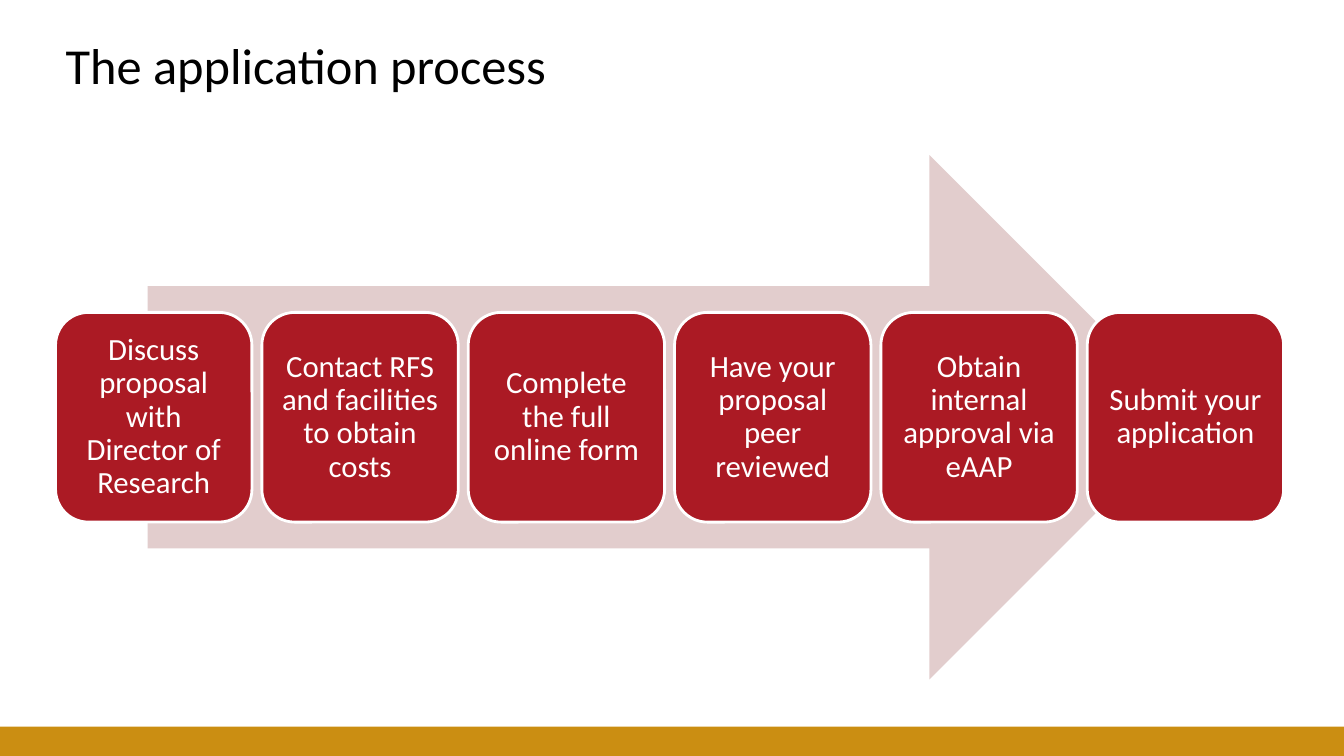
from pptx import Presentation
from pptx.dml.color import RGBColor
from pptx.enum.shapes import MSO_SHAPE as Shape
from pptx.enum.text import MSO_ANCHOR as Anchor, MSO_AUTO_SIZE as AutoSize, PP_ALIGN as Align
from pptx.util import Cm, Pt

WHITE = RGBColor(0xFF, 0xFF, 0xFF)
BLACK = RGBColor(0x00, 0x00, 0x00)
RED = RGBColor(0xAB, 0x1A, 0x24)
PINK = RGBColor(0xE2, 0xCD, 0xCD)
GOLD = RGBColor(0xCB, 0x8E, 0x12)

FONT = "Calibri"
STEPS = [
    "Discuss proposal with Director of Research",
    "Contact RFS and facilities to obtain costs",
    "Complete the full online form",
    "Have your proposal peer reviewed",
    "Obtain internal approval via eAAP",
    "Submit your application",
]


def add_filled(page, kind, left, top, width, height, color):
    shape = page.shapes.add_shape(kind, left, top, width, height)
    shape.shadow.inherit = False
    shape.fill.solid()
    shape.fill.fore_color.rgb = color
    shape.line.fill.background()
    return shape


def write(shape, text, size, color, align):
    frame = shape.text_frame
    frame.word_wrap = True
    frame.auto_size = AutoSize.NONE
    frame.vertical_anchor = Anchor.MIDDLE
    frame.text = text
    para = frame.paragraphs[0]
    para.alignment = align
    para.font.name = FONT
    para.font.size = Pt(size)
    para.font.color.rgb = color
    return frame


def add_title(page, text, left, top, width, height):
    title = page.shapes.title
    title.left, title.top, title.width, title.height = left, top, width, height
    write(title, text, 36, BLACK, Align.LEFT)


def add_step(page, text, left, top, width, height):
    box = add_filled(page, Shape.ROUNDED_RECTANGLE, left, top, width, height, RED)
    box.line.color.rgb = WHITE
    box.line.width = Pt(2)
    frame = write(box, text, 22, WHITE, Align.CENTER)
    frame.margin_left = frame.margin_right = Cm(0.23)
    frame.margin_top = frame.margin_bottom = Cm(0.23)
    frame.paragraphs[0].line_spacing = 0.9


def add_process(page, steps, left, top, width, height):
    arrow_width = int(width * 0.85)
    add_filled(page, Shape.RIGHT_ARROW, left + (width - arrow_width) // 2, top,
               arrow_width, height, PINK)
    gap = Cm(0.25)
    step_width = (width - gap * (len(steps) - 1)) // len(steps)
    step_height = int(height * 0.4)
    step_top = top + (height - step_height) // 2
    for index, text in enumerate(steps):
        step_left = left + index * (step_width + gap)
        add_step(page, text, step_left, step_top, step_width, step_height)


def main():
    deck = Presentation()
    deck.slide_width, deck.slide_height = Cm(33.87), Cm(19.05)
    page = deck.slides.add_slide(deck.slide_layouts[5])
    bar_height = Cm(0.74)
    add_filled(page, Shape.RECTANGLE, 0, deck.slide_height - bar_height,
               deck.slide_width, bar_height, GOLD)
    add_title(page, "The application process", Cm(1.4), Cm(0.71), Cm(23.6), Cm(1.8))
    add_process(page, STEPS, Cm(1.4), Cm(3.91), Cm(30.95), Cm(13.21))
    deck.save("out.pptx")


if __name__ == "__main__":
    main()
